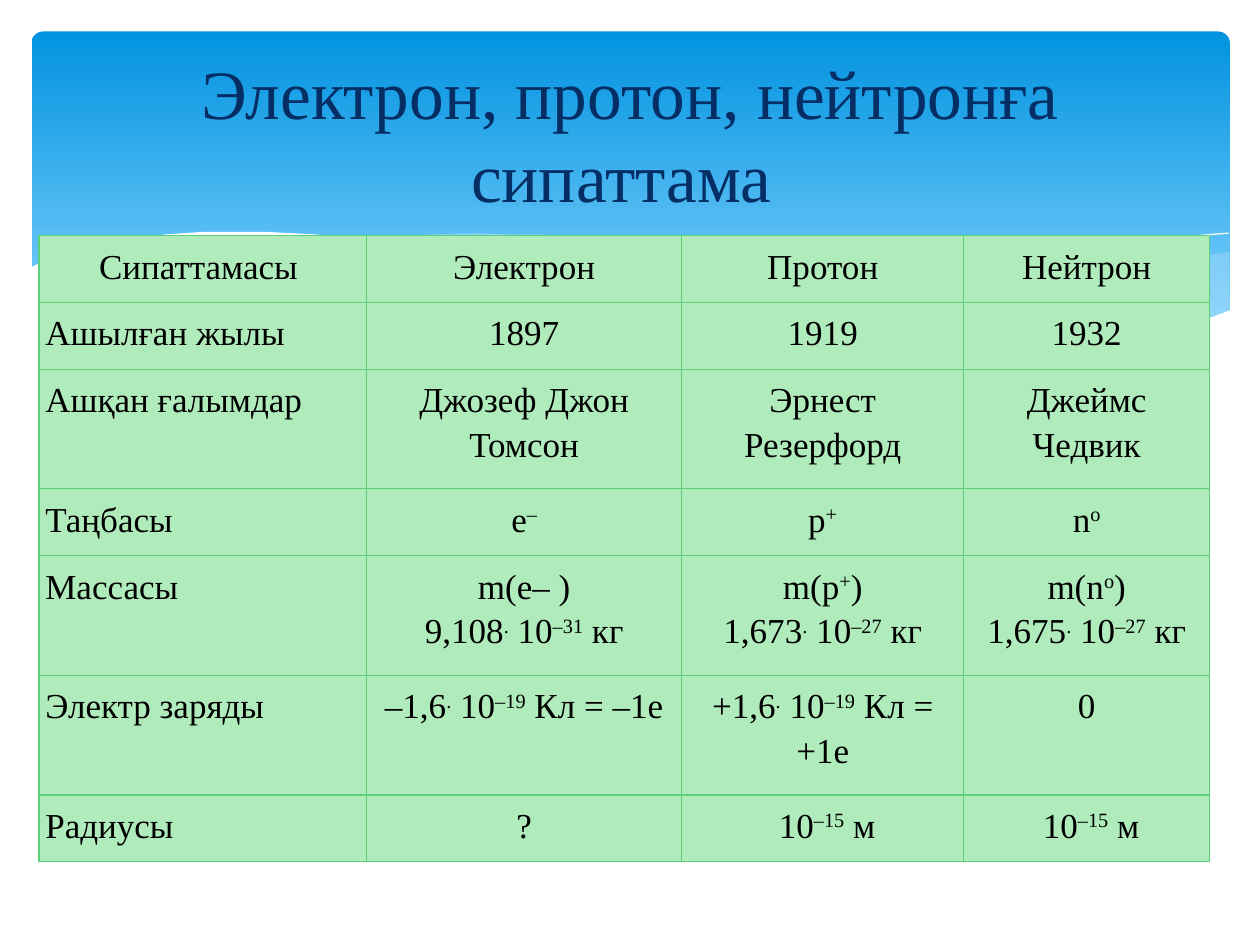
from dataclasses import dataclass

from lxml import etree
from pptx import Presentation
from pptx.dml.color import RGBColor
from pptx.enum import shapes, text
from pptx.oxml.ns import qn
from pptx.util import Inches, Pt


@dataclass(frozen=True)
class Theme:
    font: str = "Times New Roman"
    title_size: float = 39.6
    cell_size: float = 20
    title: str = "052E65"
    ink: str = "000000"
    sky_top: str = "0293E0"
    sky_bottom: str = "83D3FE"
    mist: str = "C6E7FC"
    white: str = "FFFFFF"
    cell: str = "B0EBBC"
    border: str = "5BD078"


theme = Theme()


def rgb(value):
    return RGBColor.from_string(value)


def write(paragraph, marked, size, color):
    """Write text in which ^ switches superscript on and off and a newline breaks the line."""
    paragraph.font.name = theme.font
    paragraph.font.size = Pt(size)
    paragraph.font.color.rgb = rgb(color)
    for part, words in enumerate(marked.split("^")):
        for number, line in enumerate(words.split("\n")):
            if number:
                paragraph.add_line_break()
            if line:
                run = paragraph.add_run()
                run.text = line
                if part % 2:
                    run.font._element.set("baseline", "30000")


prs = Presentation()
prs.slide_width, prs.slide_height = Inches(10), Inches(7.5)
slide = prs.slides.add_slide(prs.slide_layouts[6])

# Sky banner
banner = slide.shapes.add_shape(
    shapes.MSO_SHAPE.ROUNDED_RECTANGLE,
    Inches(0.25), Inches(0.25), Inches(9.51), Inches(2.7))
banner.adjustments[0] = 0.034
banner.shadow.inherit = False
banner.line.fill.background()
banner.fill.gradient()
banner.fill.gradient_angle = 270
sky = ((0, theme.sky_top), (0.9, theme.sky_bottom))
for stop, (position, color) in zip(banner.fill.gradient_stops, sky):
    stop.position = position
    stop.color.rgb = rgb(color)

# Waves: outline, fill colour (None for an open white line), opacity in percent
waves = [
    ([(9.75, 2), (9.48, 2.04), (9.21, 2.1), (8.91, 2.16), (8.61, 2.23),
      (8.05, 2.37), (7.53, 2.48), (7.06, 2.57), (6.61, 2.65), (6.91, 2.69),
      (7.32, 2.74), (7.69, 2.77), (8.14, 2.78), (8.54, 2.76), (8.89, 2.72),
      (9.21, 2.65), (9.49, 2.57), (9.76, 2.47), (9.76, 2)], theme.mist, 29),
    ([(8.93, 2.73), (8.37, 2.65), (7.75, 2.54), (7.06, 2.4), (6.29, 2.22),
      (5.84, 2.11), (5.41, 2.03), (5.02, 1.96), (4.65, 1.91), (4.2, 1.87),
      (3.8, 1.85), (3.44, 1.86), (3.13, 1.88), (2.86, 1.91), (3.23, 1.96),
      (3.62, 2.03), (4.04, 2.11), (4.49, 2.22), (5.3, 2.4), (6.01, 2.55),
      (6.65, 2.66), (7.22, 2.74), (7.73, 2.77), (8.18, 2.78), (8.57, 2.77)],
     theme.mist, 40),
    ([(3.09, 1.95), (3.28, 1.92), (3.53, 1.89), (3.87, 1.87), (4.33, 1.87),
      (4.89, 1.9), (5.56, 1.97), (6.08, 2.04), (6.65, 2.13), (7.27, 2.26),
      (7.95, 2.41), (8.69, 2.61), (9.07, 2.72)], None, 100),
    ([(6.13, 2.57), (6.53, 2.46), (6.95, 2.35), (7.48, 2.23), (8.06, 2.1),
      (8.66, 1.99), (8.95, 1.94), (9.24, 1.9), (9.51, 1.87), (9.75, 1.85)],
     None, 100),
    ([(9.77, 2.46), (9.5, 2.56), (9.2, 2.65), (8.87, 2.71), (8.5, 2.75),
      (8.09, 2.77), (7.61, 2.75), (7.08, 2.7), (6.48, 2.62), (5.79, 2.5),
      (5.03, 2.33), (4.47, 2.2), (3.91, 2.07), (3.4, 1.97), (2.92, 1.9),
      (2.5, 1.86), (2.11, 1.84), (1.61, 1.84), (1.32, 1.86), (1.06, 1.89),
      (0.85, 1.93), (0.67, 1.97), (0.52, 2.01), (0.4, 2.05), (0.29, 2.1),
      (0.23, 2.13), (0.23, 3.29), (9.77, 3.29)], theme.white, 100),
]
for outline, color, opacity in waves:
    start, *rest = [(Inches(x), Inches(y)) for x, y in outline]
    builder = slide.shapes.build_freeform(*start)
    builder.add_line_segments(rest, close=color is not None)
    wave = builder.convert_to_shape()
    wave.shadow.inherit = False
    if color is None:
        wave.fill.background()
        wave.line.color.rgb = rgb(theme.white)
        wave.line.width = Pt(0)
        continue
    wave.line.fill.background()
    wave.fill.solid()
    wave.fill.fore_color.rgb = rgb(color)
    if opacity < 100:
        solid = wave.fill._xPr.find(qn("a:solidFill"))
        etree.SubElement(solid[0], qn("a:alpha"), val=str(opacity * 1000))

# Particle table
rows = [
    ("Сипаттамасы ", "Электрон", "Протон", "Нейтрон"),
    ("Ашылған жылы", "1897", "1919", "1932"),
    ("Ашқан ғалымдар", "Джозеф Джон Томсон", "Эрнест Резерфорд", "Джеймс Чедвик"),
    ("Таңбасы", "е^–^", "p^+^", "n^o^"),
    ("Массасы", "m(e– )\n9,108^.^ 10^–31^ кг",
     "m(p^+^)\n1,673^.^ 10^–27^ кг", "m(n^o^)\n1,675^.^ 10^–27^ кг"),
    ("Электр заряды", "–1,6^.^ 10^–19^ Кл = –1е", "+1,6^.^ 10^–19^ Кл = +1е", "0"),
    ("Радиусы", "?", " 10^–15^ м", " 10^–15^ м"),
]
widths = (2.6, 2.5, 2.24, 1.95)
heights = (0.53, 0.53, 0.95, 0.53, 0.95, 0.95, 0.53)
particles = slide.shapes.add_table(
    len(rows), len(widths), Inches(0.31), Inches(1.87),
    Inches(sum(widths)), Inches(sum(heights))).table
for column, width in zip(particles.columns, widths):
    column.width = Inches(width)
for row, height in zip(particles.rows, heights):
    row.height = Inches(height)

for r, entries in enumerate(rows):
    for c, entry in enumerate(entries):
        cell = particles.cell(r, c)
        cell.margin_left = cell.margin_right = Inches(0.05)
        cell.margin_top = cell.margin_bottom = Inches(0.05)
        paragraph = cell.text_frame.paragraphs[0]
        paragraph.line_spacing = 1.15
        if r and c == 0:
            paragraph.alignment = text.PP_ALIGN.LEFT
            paragraph.space_after = Pt(10)
        else:
            paragraph.alignment = text.PP_ALIGN.CENTER
        write(paragraph, entry, theme.cell_size, theme.ink)
        properties = cell._tc.get_or_add_tcPr()
        for side in ("a:lnL", "a:lnR", "a:lnT", "a:lnB"):
            edge = etree.SubElement(properties, qn(side), w=str(Pt(0.75)))
            paint = etree.SubElement(edge, qn("a:solidFill"))
            etree.SubElement(paint, qn("a:srgbClr"), val=theme.border)
        cell.fill.solid()
        cell.fill.fore_color.rgb = rgb(theme.cell)

# Title
heading = slide.shapes.add_textbox(
    Inches(0.5), Inches(0.37), Inches(9), Inches(1.37)).text_frame
heading.word_wrap = True
heading.vertical_anchor = text.MSO_ANCHOR.MIDDLE
heading.paragraphs[0].alignment = text.PP_ALIGN.CENTER
write(heading.paragraphs[0], "Электрон, протон, нейтронға сипаттама ",
      theme.title_size, theme.title)

prs.save("out.pptx")
